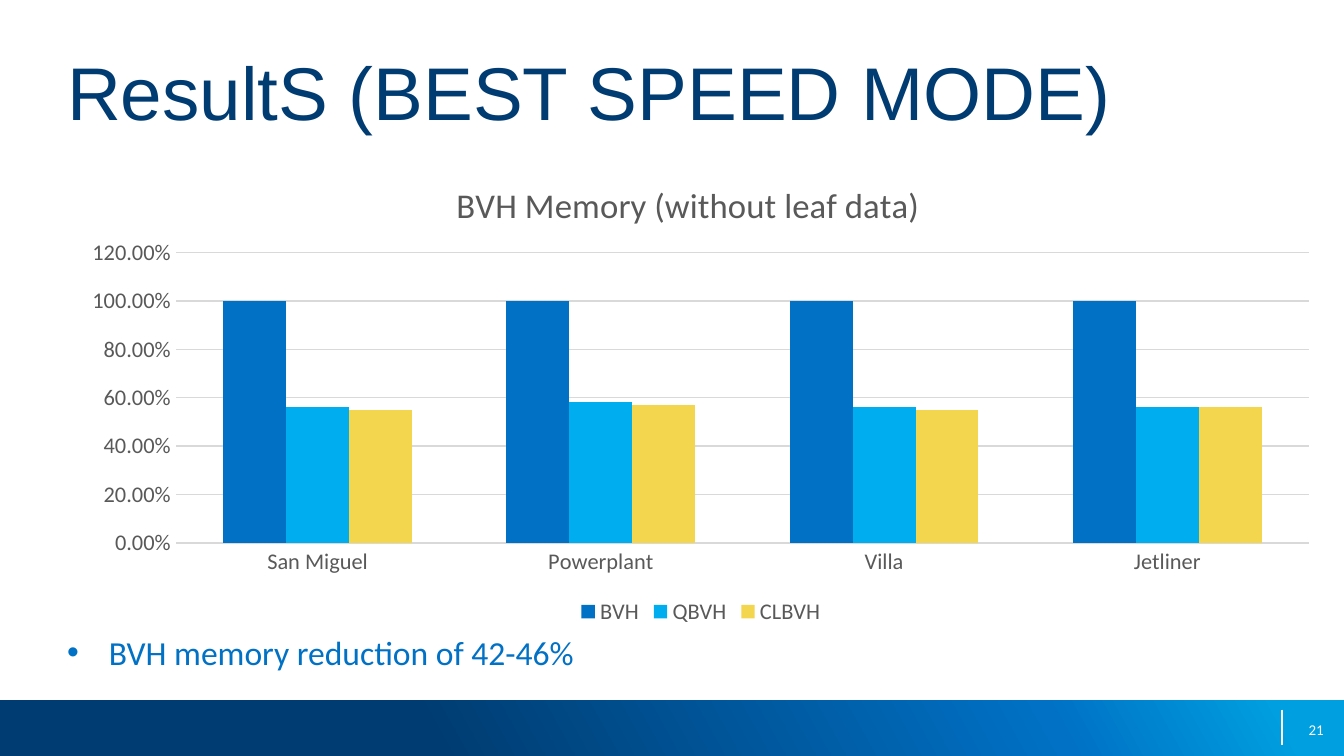
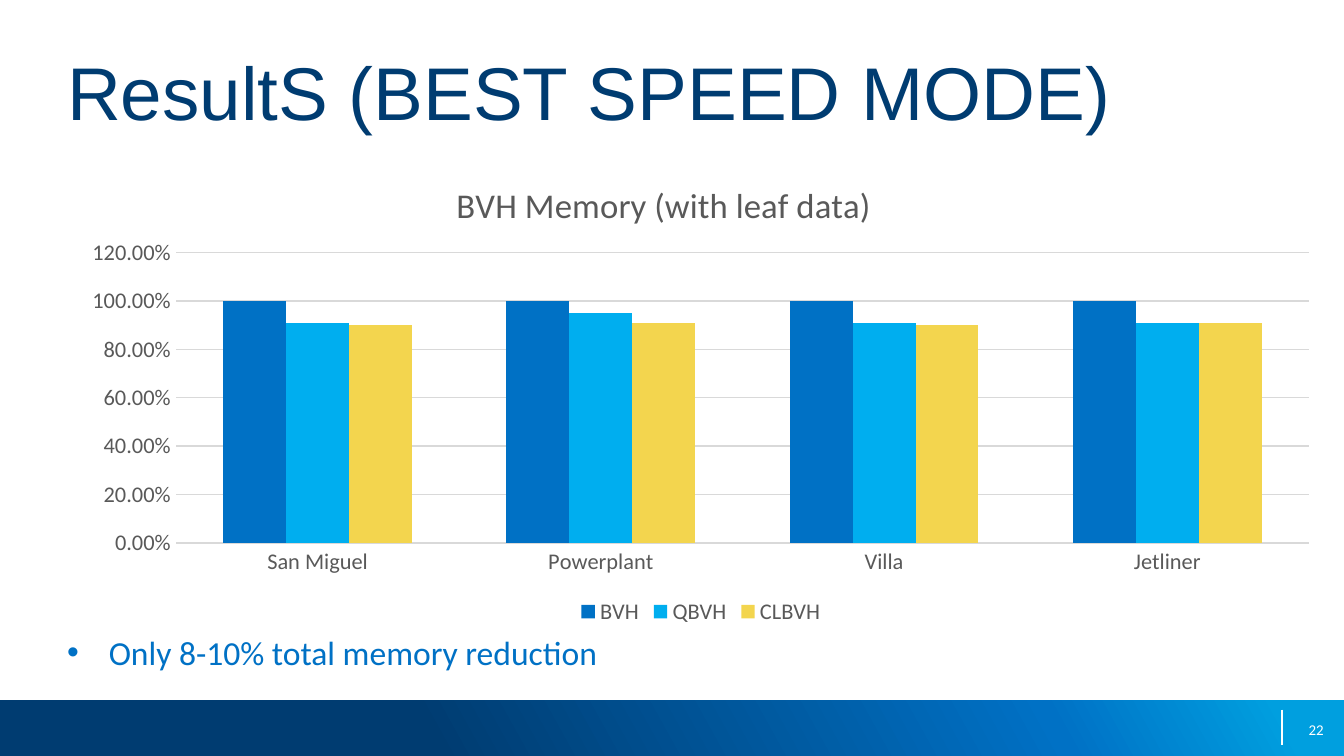
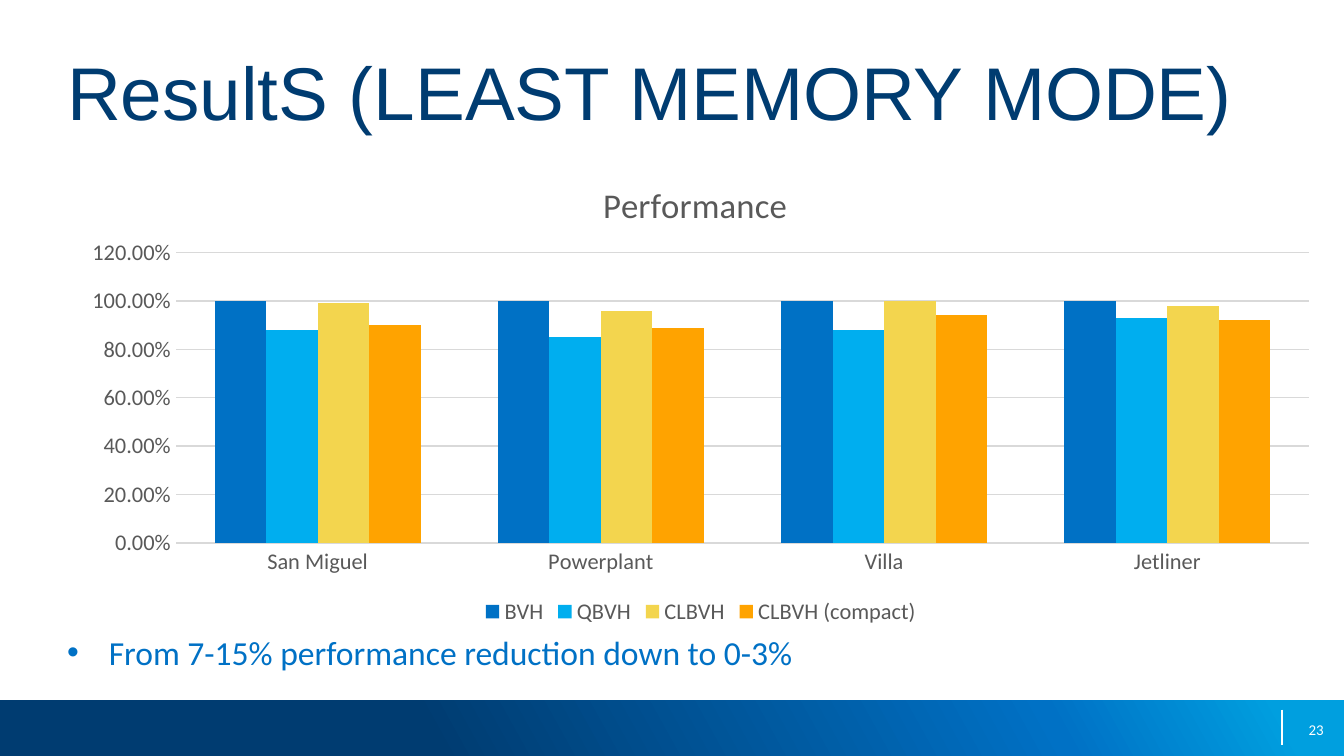
from copy import deepcopy

from lxml import etree
from pptx import Presentation
from pptx.chart.data import CategoryChartData
from pptx.dml.color import RGBColor
from pptx.enum.chart import XL_CHART_TYPE, XL_LEGEND_POSITION, XL_TICK_MARK
from pptx.enum.shapes import MSO_CONNECTOR, MSO_SHAPE
from pptx.enum.text import MSO_ANCHOR, PP_ALIGN
from pptx.oxml.ns import qn
from pptx.util import Inches, Pt

COLUMNS = XL_CHART_TYPE.COLUMN_CLUSTERED
BOTTOM = XL_LEGEND_POSITION.BOTTOM
NO_TICK = XL_TICK_MARK.NONE
STRAIGHT = MSO_CONNECTOR.STRAIGHT
RECT = MSO_SHAPE.RECTANGLE
TOP, MIDDLE = MSO_ANCHOR.TOP, MSO_ANCHOR.MIDDLE
LEFT, RIGHT = PP_ALIGN.LEFT, PP_ALIGN.RIGHT

COLORS = {
    "navy": "003C71",
    "blue": "0071C5",
    "cyan": "009FDF",
    "sky": "00AEEF",
    "yellow": "F3D54E",
    "orange": "FFA300",
    "grey": "595959",
    "grid": "D9D9D9",
    "white": "FFFFFF",
}
HEAD, BODY = "Arial", "Calibri"
STOPS = [(0.32, "navy"), (0.78, "blue"), (0.95, "cyan")]
BARS = ["blue", "sky", "yellow", "orange"]
SCENES = ["San Miguel", "Powerplant", "Villa", "Jetliner"]
FULL = [1, 1, 1, 1]

TITLE_BOX = (0.5, 0.34, 9, 0.95)
CHART_BOX = (0.5, 1.1, 9.43, 3.59)
POINT_BOX = (0.5, 4.7, 9.5, 0.37)
BAND_BOX = (0, 5.21, 10, 0.42)

SLIDES = [
    {
        "title": "ResultS (BEST SPEED MODE)",
        "chart": "BVH Memory (without leaf data)",
        "start": 2.85,
        "series": {
            "BVH": FULL,
            "QBVH": [0.56, 0.58, 0.56, 0.56],
            "CLBVH": [0.55, 0.57, 0.55, 0.56],
        },
        "point": "BVH memory reduction of 42-46%",
    },
    {
        "title": "ResultS (BEST SPEED MODE)",
        "chart": "BVH Memory (with leaf data)",
        "start": 2.85,
        "series": {
            "BVH": FULL,
            "QBVH": [0.91, 0.95, 0.91, 0.91],
            "CLBVH": [0.9, 0.91, 0.9, 0.91],
        },
        "point": "Only 8-10% total memory reduction",
    },
    {
        "title": "ResultS (LEAST MEMORY MODE)",
        "chart": "Performance",
        "start": 3.94,
        "series": {
            "BVH": FULL,
            "QBVH": [0.88, 0.85, 0.88, 0.93],
            "CLBVH": [0.99, 0.96, 1, 0.98],
            "CLBVH (compact)": [0.9, 0.89, 0.94, 0.92],
        },
        "point": "From 7-15% performance reduction down to 0-3%",
    },
]


def color(name):
    return RGBColor.from_string(COLORS[name])


def style(font, face, size, name):
    font.name = face
    font.size = Pt(size)
    font.bold = False
    font.color.rgb = color(name)


def add_text(slide, box, text, face, size, name, align=LEFT, anchor=TOP, bullet=False):
    frame = slide.shapes.add_textbox(*map(Inches, box)).text_frame
    frame.word_wrap = True
    frame.vertical_anchor = anchor
    frame.margin_left = frame.margin_right = 0
    frame.margin_top = frame.margin_bottom = 0
    para = frame.paragraphs[0]
    para.text = text
    para.alignment = align
    if bullet:
        props = para._p.get_or_add_pPr()
        props.set("marL", str(Inches(0.31)))
        props.set("indent", str(-Inches(0.31)))
        etree.SubElement(props, qn("a:buFont")).set("typeface", HEAD)
        etree.SubElement(props, qn("a:buChar")).set("char", "•")
    style(para.font, face, size, name)


def add_band(slide, box, number):
    left, top, width, height = box
    band = slide.shapes.add_shape(RECT, *map(Inches, box))
    band.shadow.inherit = False
    band.line.fill.background()
    band.fill.gradient()
    band.fill.gradient_angle = 29
    stops = band._element.spPr.find(".//" + qn("a:gsLst"))
    stops.append(deepcopy(stops[0]))
    for stop, (place, name) in zip(band.fill.gradient_stops, STOPS):
        stop.position = place
        stop.color.rgb = color(name)

    right = left + width
    ends = (right - 0.46, top + 0.07, right - 0.46, top + 0.33)
    rule = slide.shapes.add_connector(STRAIGHT, *map(Inches, ends))
    rule.line.color.rgb = color("white")
    rule.line.width = Pt(0.75)
    etree.SubElement(rule._element.spPr, qn("a:effectLst"))

    spot = (right - 2.48, top + 0.07, 2.33, 0.3)
    add_text(slide, spot, str(number), BODY, 8, "white", align=RIGHT, anchor=MIDDLE)


def set_layout(owner, **parts):
    old = owner.find(qn("c:layout"))
    if old is not None:
        owner.remove(old)
    layout = etree.Element(qn("c:layout"))
    manual = etree.SubElement(layout, qn("c:manualLayout"))
    for tag, value in parts.items():
        etree.SubElement(manual, qn("c:" + tag)).set("val", str(value))
    text = owner.find(qn("c:tx"))
    owner.insert(0 if text is None else 1, layout)


def style_axis(axis):
    axis.major_tick_mark = axis.minor_tick_mark = NO_TICK
    axis.format.line.fill.background()
    style(axis.tick_labels.font, BODY, 12, "grey")


def add_bars(slide, box, title, start, series):
    wide, high = box[2:]
    data = CategoryChartData(number_format="0.00%")
    data.categories = SCENES
    for name, values in series.items():
        data.add_series(name, values)
    chart = slide.shapes.add_chart(COLUMNS, *map(Inches, box), data).chart
    chart.font.name = BODY
    chart.font.size = Pt(10)

    chart.has_title = True
    head = chart.chart_title
    head.text_frame.text = title
    style(head.text_frame.paragraphs[0].font, BODY, 18.6, "grey")
    set_layout(head._element, xMode="edge", yMode="edge",
               x=start / wide, y=0.2 / high)

    plot = chart.plots[0]
    plot.gap_width = 150
    plot.overlap = 0
    plot.vary_by_categories = False
    for bars, name in zip(plot.series, BARS):
        bars.format.fill.solid()
        bars.format.fill.fore_color.rgb = color(name)
    area = chart._chartSpace.chart.plotArea
    set_layout(area, layoutTarget="inner", xMode="edge", yMode="edge",
               x=0.81 / wide, y=0.78 / high, w=8.43 / wide, h=2.16 / high)

    style_axis(chart.category_axis)
    scale = chart.value_axis
    style_axis(scale)
    scale.minimum_scale = 0
    scale.maximum_scale = 1.2
    scale.major_unit = 0.2
    scale.tick_labels.number_format = "0.00%"
    scale.tick_labels.number_format_is_linked = False
    scale.major_gridlines.format.line.color.rgb = color("grid")
    scale.major_gridlines.format.line.width = Pt(0.75)

    chart.has_legend = True
    chart.legend.position = BOTTOM
    chart.legend.include_in_layout = False
    style(chart.legend.font, BODY, 12, "grey")


def add_result(deck, number, item):
    slide = deck.slides.add_slide(deck.slide_layouts[6])
    slide.background.fill.solid()
    slide.background.fill.fore_color.rgb = color("white")
    add_band(slide, BAND_BOX, number)
    add_bars(slide, CHART_BOX, item["chart"], item["start"], item["series"])
    add_text(slide, TITLE_BOX, item["title"], HEAD, 40, "navy")
    add_text(slide, POINT_BOX, item["point"], BODY, 18, "blue", bullet=True)


def main():
    deck = Presentation()
    deck.slide_width = Inches(10)
    deck.slide_height = deck.slide_width * 9 // 16
    for number, item in enumerate(SLIDES, 21):
        add_result(deck, number, item)
    deck.save("out.pptx")


if __name__ == "__main__":
    main()
